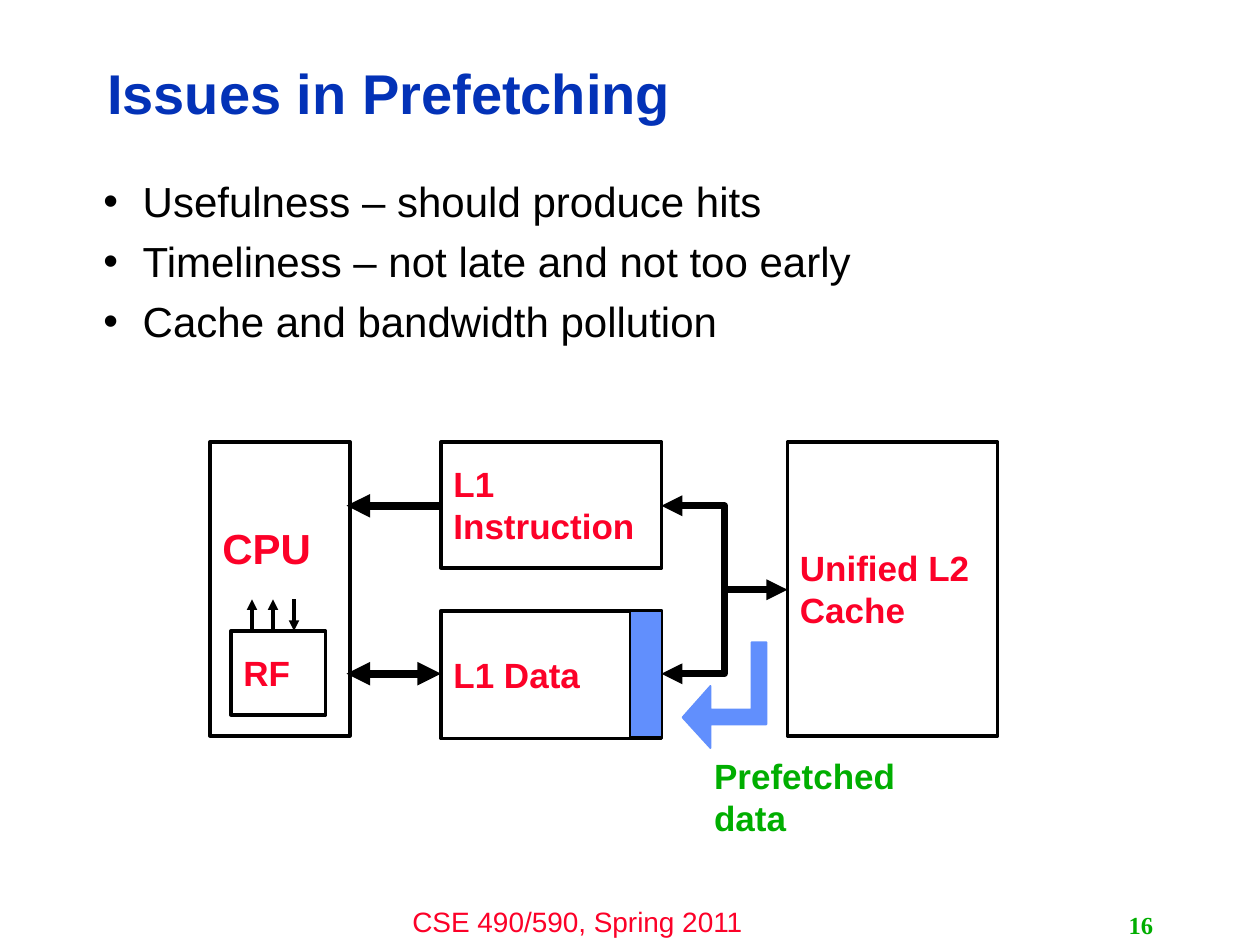
from lxml import etree
from pptx import Presentation
from pptx.dml.color import RGBColor
from pptx.enum import shapes, text
from pptx.oxml import ns
from pptx.util import Pt

BLACK, WHITE, RED, GREEN, BLUE = "000000", "FFFFFF", "FC0128", "00AE00", "618FFD"


def write(sp, lines, size, color, bold=True, font="Arial", anchor="t", align="l", bullet=False):
    tf = sp.text_frame
    tf.word_wrap = True
    tf.vertical_anchor = {"t": text.MSO_ANCHOR.TOP, "m": text.MSO_ANCHOR.MIDDLE}[anchor]
    tf.text = lines
    for i, p in enumerate(tf.paragraphs):
        p.alignment = {"l": text.PP_ALIGN.LEFT, "c": text.PP_ALIGN.CENTER,
                       "r": text.PP_ALIGN.RIGHT}[align]
        if bullet:
            p.line_spacing = 0.9
            if i:
                p.space_before = Pt(8.3)
            pPr = p._p.get_or_add_pPr()
            pPr.set("marL", str(Pt(22.5)))
            pPr.set("indent", str(-Pt(22.5)))
            etree.SubElement(pPr, ns.qn("a:buFont"), typeface="Arial")
            etree.SubElement(pPr, ns.qn("a:buChar"), char="•")
        for r in p.runs:
            r.font.size, r.font.bold, r.font.name = Pt(size), bold, font
            r.font.color.rgb = RGBColor.from_string(color)


def style(sp, line, width, fill=None, ends=()):
    """Set fill, line and arrowheads, and take the shadow off."""
    if fill:
        sp.fill.solid()
        sp.fill.fore_color.rgb = RGBColor.from_string(fill)
    sp.line.color.rgb = RGBColor.from_string(line)
    sp.line.width = Pt(width)
    for end in ends:
        etree.SubElement(sp.line._get_or_add_ln(), ns.qn("a:" + end), type="triangle")
    etree.SubElement(sp._element.spPr, ns.qn("a:effectLst"))


prs = Presentation()
prs.slide_width, prs.slide_height = Pt(720), Pt(540)
s = prs.slides.add_slide(prs.slide_layouts[5])

title = s.shapes.title
title.left, title.top, title.width, title.height = Pt(54), Pt(26), Pt(574.5), Pt(58.5)
write(title, "Issues in Prefetching", 32, "0332B7", anchor="m")
title.text_frame.paragraphs[0].line_spacing = 0.9

# Bullets, footer and slide number
issues = "\n".join(["Usefulness – should produce hits",
                    "Timeliness – not late and not too early",
                    "Cache and bandwidth pollution"])
for box, lines, size, color, options in [
    ((52, 100, 612, 126), issues, 24, BLACK, dict(bold=False, bullet=True)),
    ((210, 513.5, 240, 26.5), "CSE 490/590, Spring 2011", 16, RED, dict(bold=False, align="c")),
    ((516, 517, 150, 23), "16", 14, GREEN,
     dict(font="Times New Roman", anchor="m", align="r")),
]:
    write(s.shapes.add_textbox(*map(Pt, box)), lines, size, color, **options)

# Processor and caches
for box, label, fill, width in [
    ((120, 252.5, 80, 168), "", WHITE, 2),
    ((252, 349, 126, 73), "L1 Data", WHITE, 2),
    ((252, 252.5, 126, 72), "L1 Instruction", WHITE, 2),
    ((450, 252.5, 120, 168), "Unified L2 Cache", WHITE, 2),
    ((132, 360.5, 54, 48), "RF", WHITE, 2),
    ((360, 349, 18, 72), "", BLUE, 1),
]:
    sp = s.shapes.add_shape(shapes.MSO_SHAPE.RECTANGLE, *map(Pt, box))
    style(sp, BLACK, width, fill)
    if label:
        write(sp, label, 20, RED, anchor="m")

for box, label, size, color in [
    ((120, 295, 78, 36), "CPU", 24, RED),
    ((401, 427.5, 164, 31), "Prefetched data", 20, GREEN),
]:
    write(s.shapes.add_textbox(*map(Pt, box)), label, size, color)

# Straight arrows: CPU to the L1 caches, then the register file ports
instr_y, mid_y, data_y = 289, 337, 385
for points, width, ends in [
    ((252, instr_y, 198, instr_y), 4.5, ["tailEnd"]),
    ((252, data_y, 198, data_y), 4.5, ["headEnd", "tailEnd"]),
    ((144, 360.5, 144, 342.5), 2, ["tailEnd"]),
    ((156, 360.5, 156, 342.5), 2, ["tailEnd"]),
    ((168, 342.5, 168, 360.5), 2, ["tailEnd"]),
]:
    arrow = s.shapes.add_connector(shapes.MSO_CONNECTOR.STRAIGHT, *map(Pt, points))
    style(arrow, BLACK, width, ends=ends)

# Bent arrows: L1 caches to L2, then the prefetch path
for points, color, width, fill, ends in [
    ([(378, instr_y), (414, instr_y), (414, mid_y), (450, mid_y)],
     BLACK, 4, None, ["headEnd", "tailEnd"]),
    ([(414, mid_y), (414, data_y), (378, data_y)], BLACK, 4, None, ["tailEnd"]),
    ([(390, 410), (406, 392), (406, 405.5), (429.5, 405.5), (429.5, 367),
      (438, 367), (438, 414), (406, 414), (406, 427.5)], BLUE, 1, BLUE, []),
]:
    start, *rest = [(Pt(x), Pt(y)) for x, y in points]
    builder = s.shapes.build_freeform(*start)
    builder.add_line_segments(rest, close=bool(fill))
    bent = builder.convert_to_shape()
    if not fill:
        bent.fill.background()
    style(bent, color, width, fill, ends)

prs.save("out.pptx")
